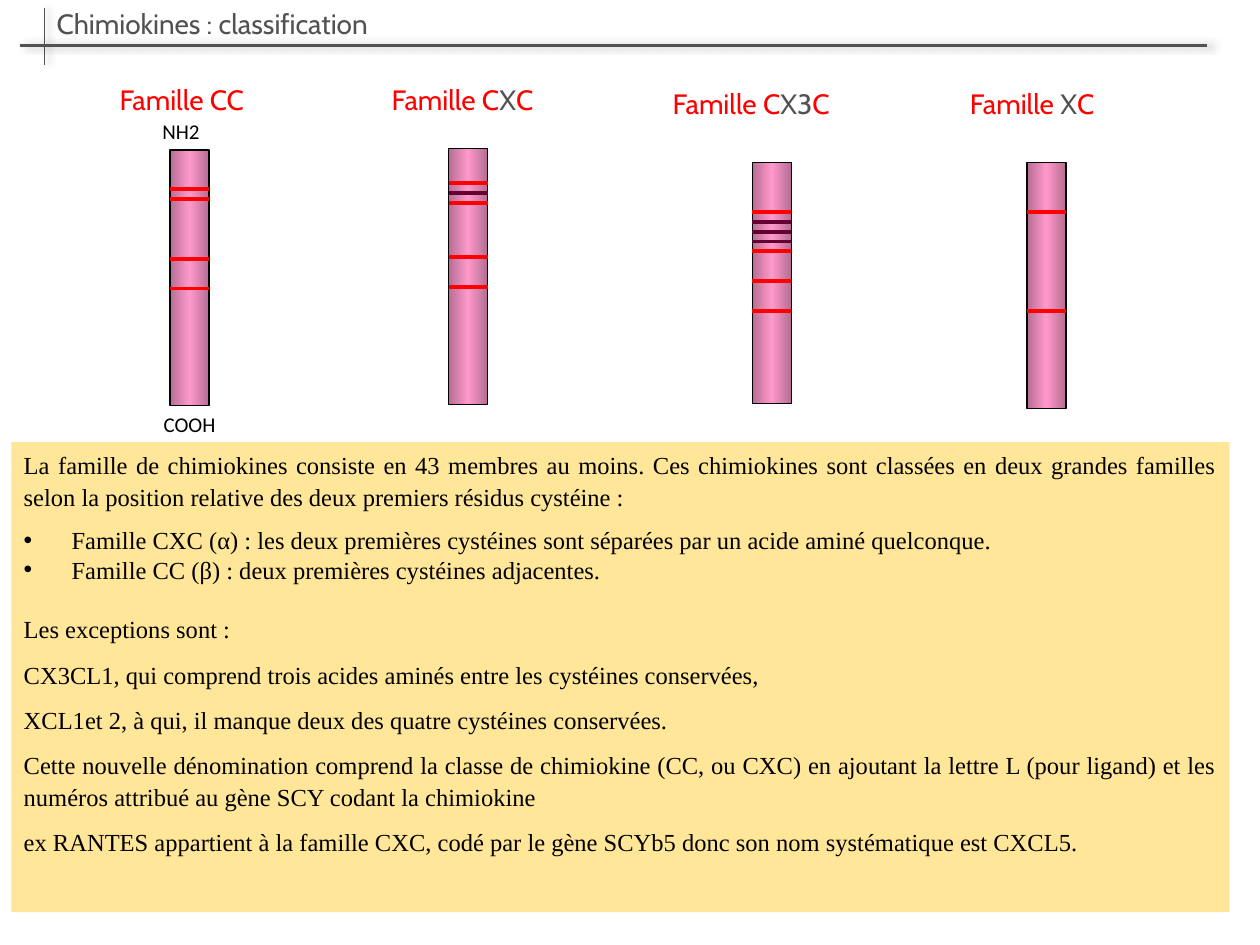
import copy

import lxml.etree
import pptx
import pptx.dml.color
import pptx.enum.shapes
import pptx.enum.text
import pptx.oxml.ns
import pptx.util

RGB = pptx.dml.color.RGBColor
GREY = RGB(0x52, 0x52, 0x52)
RED = RGB(0xFF, 0x00, 0x00)
PLUM = RGB(0x66, 0x00, 0x33)
BLACK = RGB(0x00, 0x00, 0x00)
PINK = RGB(0xFF, 0x99, 0xCC)
MAUVE = RGB(0xB6, 0x6D, 0x92)
SAND = RGB(0xFF, 0xE6, 0x99)

inch = pptx.util.Inches
Pt = pptx.util.Pt
qn = pptx.oxml.ns.qn
RECT = pptx.enum.shapes.MSO_SHAPE.RECTANGLE
TOP = pptx.enum.text.MSO_ANCHOR.TOP

prs = pptx.Presentation()
prs.slide_width, prs.slide_height = inch(10), inch(7.5)
s = prs.slides.add_slide(prs.slide_layouts[5])


def add_line(x1, y1, x2, y2, color, width, shadow=False):
    line = s.shapes.add_connector(pptx.enum.shapes.MSO_CONNECTOR.STRAIGHT,
                                  inch(x1), inch(y1), inch(x2), inch(y2))
    line.line.color.rgb = color
    line.line.width = Pt(width)
    effects = lxml.etree.SubElement(line._element.spPr, qn("a:effectLst"))
    if shadow:
        outer = lxml.etree.SubElement(effects, qn("a:outerShdw"), blurRad=str(Pt(4)),
                                      dist=str(Pt(3)), dir="0", rotWithShape="0")
        black = lxml.etree.SubElement(outer, qn("a:srgbClr"), val="000000")
        lxml.etree.SubElement(black, qn("a:alpha"), val="40000")


def add_label(x, y, w, h, parts, font, size):
    """Add a one-line text box from (text, color) parts."""
    tf = s.shapes.add_textbox(inch(x), inch(y), inch(w), inch(h)).text_frame
    tf.word_wrap = False
    for text, color in parts:
        r = tf.paragraphs[0].add_run()
        r.text = text
        r.font.name, r.font.size, r.font.color.rgb = font, Pt(size), color


# Title with its crossed rules
title = s.shapes.title
title.left, title.top, title.width, title.height = inch(0.35), 0, inch(6.2), inch(0.37)
tf = title.text_frame
tf.text = "Chimiokines : classification"
tf.vertical_anchor = TOP
tf.auto_size = pptx.enum.text.MSO_AUTO_SIZE.NONE
p = tf.paragraphs[0]
p.alignment = pptx.enum.text.PP_ALIGN.LEFT
r = p.runs[0]
r.font.name, r.font.size, r.font.color.rgb = "Cabin", Pt(16), GREY
add_line(0.35, 0.06, 0.35, 0.52, GREY, 0.5, shadow=True)
add_line(0.16, 0.36, 9.58, 0.36, GREY, 0, shadow=True)

# Families: label parts, label x, y, width; bar x, y, height;
# first residue y, then cysteine and other residues in steps below it
BAR_W = 0.31
STEP = 0.79 / 10
families = [
    ([("Famille CC", RED)], 0.85, 0.61, 1.28,
     1.35, 1.19, 2.03, 1.5, [0, 1, 7, 10], []),
    ([("Famille C", RED), ("X", GREY), ("C", RED)], 3.01, 0.61, 1.41,
     3.56, 1.18, 2.03, 1.45, [0, 2, 7.5, 10.5], [1]),
    ([("Famille C", RED), ("X3", GREY), ("C", RED)], 5.24, 0.64, 1.52,
     5.97, 1.29, 1.91, 1.68, [0, 4, 7, 10], [1, 2, 3]),
    ([("Famille ", RED), ("X", GREY), ("C", RED)], 7.6, 0.64, 1.27,
     8.15, 1.29, 1.95, 1.68, [0, 10], []),
]
for parts, lx, ly, lw, x, y, h, first, cysteines, others in families:
    add_label(lx, ly, lw, 0.37, parts, "Cabin", 16)
    bar = s.shapes.add_shape(RECT, inch(x), inch(y), inch(BAR_W), inch(h))
    bar.shadow.inherit = False
    bar.line.color.rgb = BLACK
    bar.line.width = Pt(0.75)
    bar.fill.gradient()
    bar.fill.gradient_angle = 0
    stop_list = bar._element.spPr.find(".//" + qn("a:gsLst"))
    stop_list.insert(1, copy.deepcopy(stop_list[0]))
    for stop, position, color in zip(bar.fill.gradient_stops, (0, 0.5, 1),
                                     (MAUVE, PINK, MAUVE)):
        stop.position = position
        stop.color.rgb = color
    for residues, color in ((cysteines, RED), (others, PLUM)):
        for n in residues:
            add_line(x, first + n * STEP, x + BAR_W, first + n * STEP, color, 2.25)

add_label(1.19, 0.89, 0.5, 0.3, [("NH2", BLACK)], "Calibri", 12)
add_label(1.2, 3.22, 0.62, 0.3, [("COOH", BLACK)], "Calibri", 12)

# Explanation: text, bulleted, space before
paragraphs = [
    ("La famille de chimiokines consiste en 43 membres au moins. Ces chimiokines sont "
     "classées en deux grandes familles selon la position relative des deux premiers "
     "résidus cystéine :", False, 0),
    ("Famille CXC (α) : les deux premières cystéines sont séparées par un acide aminé "
     "quelconque.", True, 0),
    ("Famille CC (β) : deux premières cystéines adjacentes.", True, 0),
    ("Les exceptions sont :", False, 16),
    ("CX3CL1, qui comprend trois acides aminés entre les cystéines conservées,", False, 0),
    ("XCL1et 2, à qui, il manque deux des quatre cystéines conservées.", False, 0),
    ("Cette nouvelle dénomination comprend la classe de chimiokine (CC, ou CXC) en "
     "ajoutant la lettre L (pour ligand) et les numéros attribué au gène SCY codant la "
     "chimiokine", False, 0),
    ("ex RANTES appartient à la famille CXC, codé par le gène SCYb5 donc son nom "
     "systématique est CXCL5.", False, 0),
]
box = s.shapes.add_shape(RECT, inch(0.09), inch(3.51), inch(9.67), inch(3.73))
box.shadow.inherit = False
box.fill.solid()
box.fill.fore_color.rgb = SAND
box.line.fill.background()
tf = box.text_frame
tf.word_wrap = True
tf.vertical_anchor = TOP
tf.text = "\n".join(text for text, bulleted, before in paragraphs)
for p, (text, bulleted, before) in zip(tf.paragraphs, paragraphs):
    p.alignment = pptx.enum.text.PP_ALIGN.JUSTIFY
    if before:
        p.space_before = Pt(before)
    if bulleted:
        pPr = p._p.get_or_add_pPr()
        pPr.set("marL", str(inch(0.38)))
        pPr.set("indent", str(-inch(0.38)))
        lxml.etree.SubElement(pPr, qn("a:buFont"), typeface="Arial")
        lxml.etree.SubElement(pPr, qn("a:buChar"), char="•")
    else:
        p.line_spacing = 1.07
        p.space_after = Pt(8)
    font = p.runs[0].font
    font.name, font.size, font.color.rgb = "Times New Roman", Pt(14), BLACK

prs.save("out.pptx")
